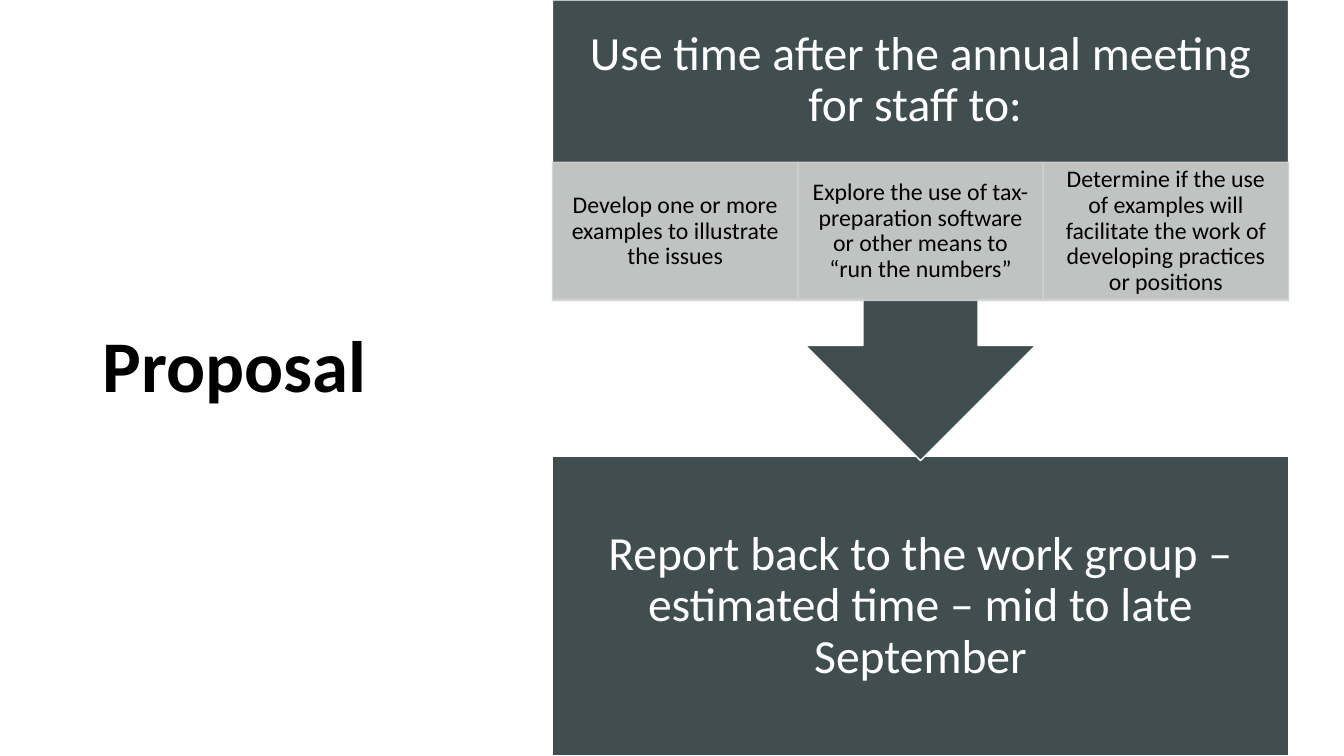
from pptx import Presentation
from pptx.dml.color import RGBColor
from pptx.enum import shapes, text
from pptx.oxml.ns import qn
from pptx.util import Inches, Pt
from lxml import etree

COLORS = {"dark": "414E50", "pale": "CFD0D0", "white": "FFFFFF", "black": "000000"}
FONT = "Calibri"
STEPS = [
    "Develop one or more examples to illustrate the issues",
    "Explore the use of tax-preparation software or other means to “run the numbers”",
    "Determine if the use of examples will facilitate the work of developing practices or positions",
]


def rgb(name):
    return RGBColor.from_string(COLORS[name])


def write(sp, words, size, color, margins=(0.1, 0.05), align=text.PP_ALIGN.CENTER, bold=False):
    tf = sp.text_frame
    tf.word_wrap = True
    tf.auto_size = text.MSO_AUTO_SIZE.NONE
    tf.vertical_anchor = text.MSO_ANCHOR.MIDDLE
    tf.margin_left = tf.margin_right = Inches(margins[0])
    tf.margin_top = tf.margin_bottom = Inches(margins[1])
    p = tf.paragraphs[0]
    p.alignment = align
    p.line_spacing = 0.9
    r = p.add_run()
    r.text = words
    r.font.name = FONT
    r.font.size = Pt(size)
    r.font.bold = bold
    r.font.color.rgb = rgb(color)


def add_block(s, kind, box, fill, line, alpha=None):
    sp = s.shapes.add_shape(kind, *map(Inches, box))
    sp.shadow.inherit = False
    sp.fill.solid()
    sp.fill.fore_color.rgb = rgb(fill)
    sp.line.color.rgb = rgb(line)
    sp.line.width = Pt(1)
    if alpha is not None:
        for clr in sp._element.spPr.iter(qn("a:srgbClr")):
            etree.SubElement(clr, qn("a:alpha")).set("val", str(alpha * 1000))
    return sp


def add_title(s, box):
    title = s.shapes.title
    title.left, title.top, title.width, title.height = map(Inches, box)
    write(title, "Proposal", 52, "black", align=text.PP_ALIGN.LEFT, bold=True)


def add_report(s, box):
    sp = add_block(s, shapes.MSO_SHAPE.RECTANGLE, box, "dark", "white")
    write(sp, "Report back to the work group – estimated time – mid to late September",
          34, "white", (0.26, 0.26))


def add_callout(s, box):
    x, y, w, h = box
    arrow = add_block(s, shapes.MSO_SHAPE.UP_ARROW_CALLOUT, box, "dark", "white")
    arrow.rotation = 180
    heading = s.shapes.add_textbox(*map(Inches, (x, y, w, 0.35 * h)))
    write(heading, "Use time after the annual meeting for staff to: ", 34, "white", (0.26, 0.26))
    step_w = w / len(STEPS)
    for i, step in enumerate(STEPS):
        sp = add_block(s, shapes.MSO_SHAPE.RECTANGLE,
                       (x + i * step_w, y + 1.61, step_w, 0.3 * h), "pale", "pale", 90)
        write(sp, step, 17, "black", (0.13, 0.02))


def main():
    prs = Presentation()
    prs.slide_width, prs.slide_height = Inches(13.33), Inches(7.5)
    s = prs.slides.add_slide(prs.slide_layouts[5])
    add_title(s, (0.92, 0.61, 5.32, 6.09))
    add_report(s, (5.48, 4.53, 7.3, 2.97))
    add_callout(s, (5.48, 0, 7.3, 4.57))
    prs.save("out.pptx")


if __name__ == "__main__":
    main()
